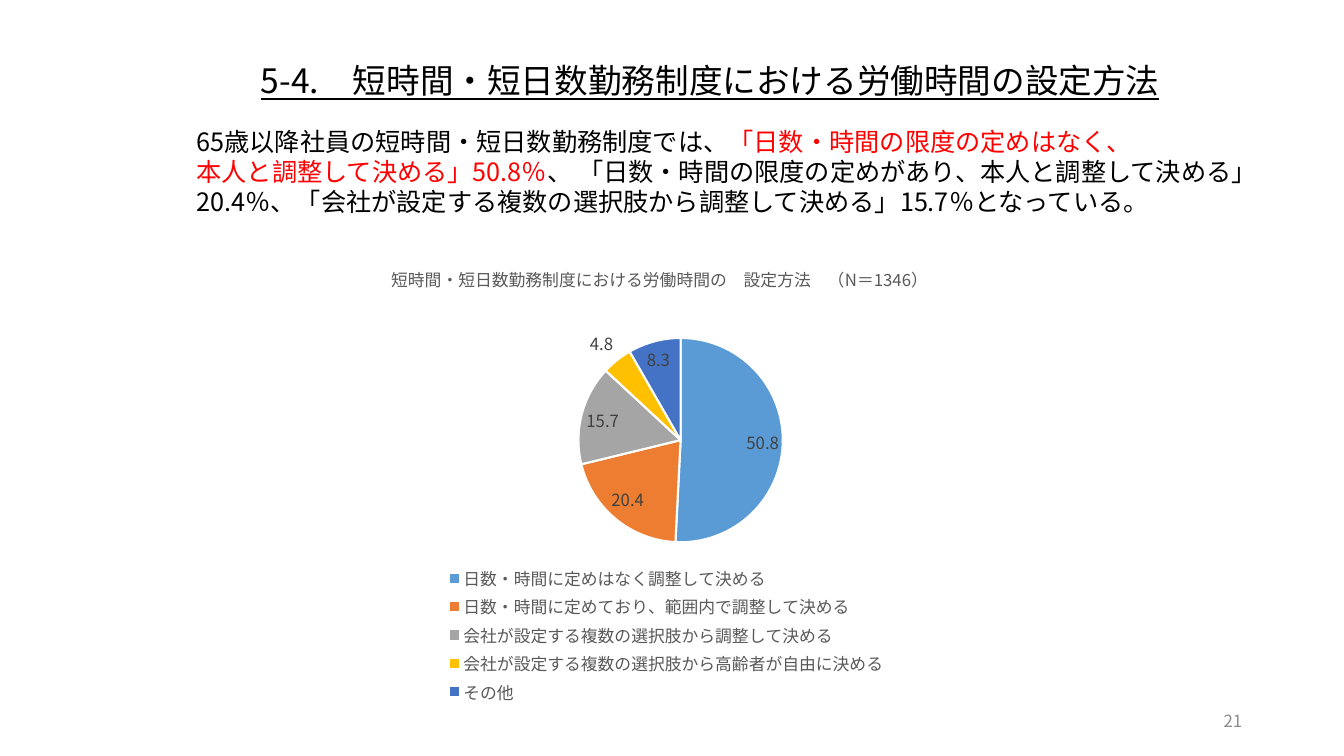
import pptx
import pptx.util
import pptx.chart.data
import pptx.dml.color
import pptx.enum.chart
import pptx.enum.text
import pptx.oxml
import pptx.oxml.ns

RGBColor = pptx.dml.color.RGBColor
BLACK = RGBColor(0, 0, 0)
WHITE = RGBColor(255, 255, 255)
RED = RGBColor(255, 0, 0)
NUMBER_GRAY = RGBColor(0x8C, 0x8C, 0x8C)
LEGEND_GRAY = RGBColor(0x59, 0x59, 0x59)
LABEL_GRAY = RGBColor(0x40, 0x40, 0x40)
SLICE_COLORS = [
    RGBColor(0x5B, 0x9B, 0xD5),
    RGBColor(0xED, 0x7D, 0x31),
    RGBColor(0xA5, 0xA5, 0xA5),
    RGBColor(0xFF, 0xC0, 0x00),
    RGBColor(0x44, 0x72, 0xC4),
]

FONT = "Noto Sans CJK JP"
WIDTH = pptx.util.Inches(13.33)
HEIGHT = pptx.util.Inches(7.5)
qn = pptx.oxml.ns.qn

HEADING = [[("5-4.　短時間・短日数勤務制度における労働時間の設定方法", BLACK)]]
SUMMARY = [
    [("65歳以降社員の短時間・短日数勤務制度では、", BLACK),
     ("「日数・時間の限度の定めはなく、", RED)],
    [("本人と調整して決める」50.8％", RED),
     ("、 「日数・時間の限度の定めがあり、本人と調整して決める」", BLACK)],
    [("20.4％、「会社が設定する複数の選択肢から調整して決める」15.7％となっている。", BLACK)],
]
CHART_TITLE = "短時間・短日数勤務制度における労働時間の　設定方法　（N＝1346）"
SHARES = {
    "日数・時間に定めはなく調整して決める": 50.8,
    "日数・時間に定めており、範囲内で調整して決める": 20.4,
    "会社が設定する複数の選択肢から調整して決める": 15.7,
    "会社が設定する複数の選択肢から高齢者が自由に決める": 4.8,
    "その他": 8.3,
}


def place(left, top, width, height):
    return (int(WIDTH * left / 100), int(HEIGHT * top / 100),
            int(WIDTH * width / 100), int(HEIGHT * height / 100))


def style_font(font, size, color):
    font.name = FONT
    font.size = pptx.util.Pt(size)
    font.color.rgb = color


def add_text(page, area, lines, size, underline=None, wrap=False, align=None):
    frame = page.shapes.add_textbox(*place(*area)).text_frame
    frame.word_wrap = wrap
    if wrap:
        frame.vertical_anchor = pptx.enum.text.MSO_ANCHOR.MIDDLE
    else:
        frame.auto_size = pptx.enum.text.MSO_AUTO_SIZE.SHAPE_TO_FIT_TEXT
    for index, line in enumerate(lines):
        para = frame.add_paragraph() if index else frame.paragraphs[0]
        para.alignment = align
        para.line_spacing = pptx.util.Pt(size * 1.2)
        for text, color in line:
            span = para.add_run()
            span.text = text
            style_font(span.font, size, color)
            span.font.underline = underline


def set_layout(part, index, inner=False, **shares):
    for old in part.findall(qn("c:layout")):
        part.remove(old)
    target = '<c:layoutTarget val="inner"/>' if inner else ""
    modes = "".join(f'<c:{axis}Mode val="edge"/>' for axis in "xy")
    values = "".join(f'<c:{key} val="{value}"/>' for key, value in shares.items())
    part.insert(index, pptx.oxml.parse_xml(
        f'<c:layout {pptx.oxml.ns.nsdecls("c")}><c:manualLayout>'
        f'{target}{modes}{values}</c:manualLayout></c:layout>'))


def add_pie(page, area):
    data = pptx.chart.data.CategoryChartData()
    data.categories = list(SHARES)
    data.add_series("Series 1", list(SHARES.values()))
    chart = page.shapes.add_chart(
        pptx.enum.chart.XL_CHART_TYPE.PIE, *place(*area), data).chart
    style_font(chart.font, 10, BLACK)

    chart.has_title = True
    span = chart.chart_title.text_frame.paragraphs[0].add_run()
    span.text = CHART_TITLE
    style_font(span.font, 12, LEGEND_GRAY)
    span.font.bold = False

    chart.has_legend = True
    chart.legend.position = pptx.enum.chart.XL_LEGEND_POSITION.BOTTOM
    chart.legend.include_in_layout = False
    style_font(chart.legend.font, 12, LEGEND_GRAY)

    plot = chart.plots[0]
    plot.vary_by_categories = True
    for index, color in enumerate(SLICE_COLORS):
        look = plot.series[0].points[index].format
        look.fill.solid()
        look.fill.fore_color.rgb = color
        look.line.color.rgb = WHITE
        look.line.width = pptx.util.Pt(1.5)
    labels = plot.series[0].data_labels
    labels.show_value = True
    labels.position = pptx.enum.chart.XL_LABEL_POSITION.BEST_FIT
    style_font(labels.font, 12, LABEL_GRAY)

    set_layout(chart.chart_title.element if hasattr(chart.chart_title, "element")
               else chart.element.find(".//" + qn("c:title")), 1, x=0.11, y=0.04)
    set_layout(chart.element.find(".//" + qn("c:plotArea")), 0, inner=True,
               x=0.38, y=0.2, w=0.29, h=0.44)
    set_layout(chart.element.find(".//" + qn("c:legend")), 1,
               x=0.18, y=0.68, w=0.65, h=0.31)
    return chart


def set_east_asian_font(root):
    for latin in list(root.iter(qn("a:latin"))):
        latin.addnext(pptx.oxml.parse_xml(
            f'<a:ea {pptx.oxml.ns.nsdecls("a")} typeface="{FONT}"/>'))


def main():
    deck = pptx.Presentation()
    deck.slide_width, deck.slide_height = WIDTH, HEIGHT
    page = deck.slides.add_slide(deck.slide_layouts[6])
    add_text(page, (18.68, 7.33, 69.24, 6.67), HEADING, 24, underline=True)
    add_text(page, (13.88, 16, 81.47, 13.47), SUMMARY, 18)
    chart = add_pie(page, (23.11, 32.13, 52.44, 62.13))
    add_text(page, (70.67, 92.67, 22.5, 5.33), [[("21", NUMBER_GRAY)]], 12,
             wrap=True, align=pptx.enum.text.PP_ALIGN.RIGHT)
    for root in (page.element, chart.element):
        set_east_asian_font(root)
    deck.save("out.pptx")


if __name__ == "__main__":
    main()
